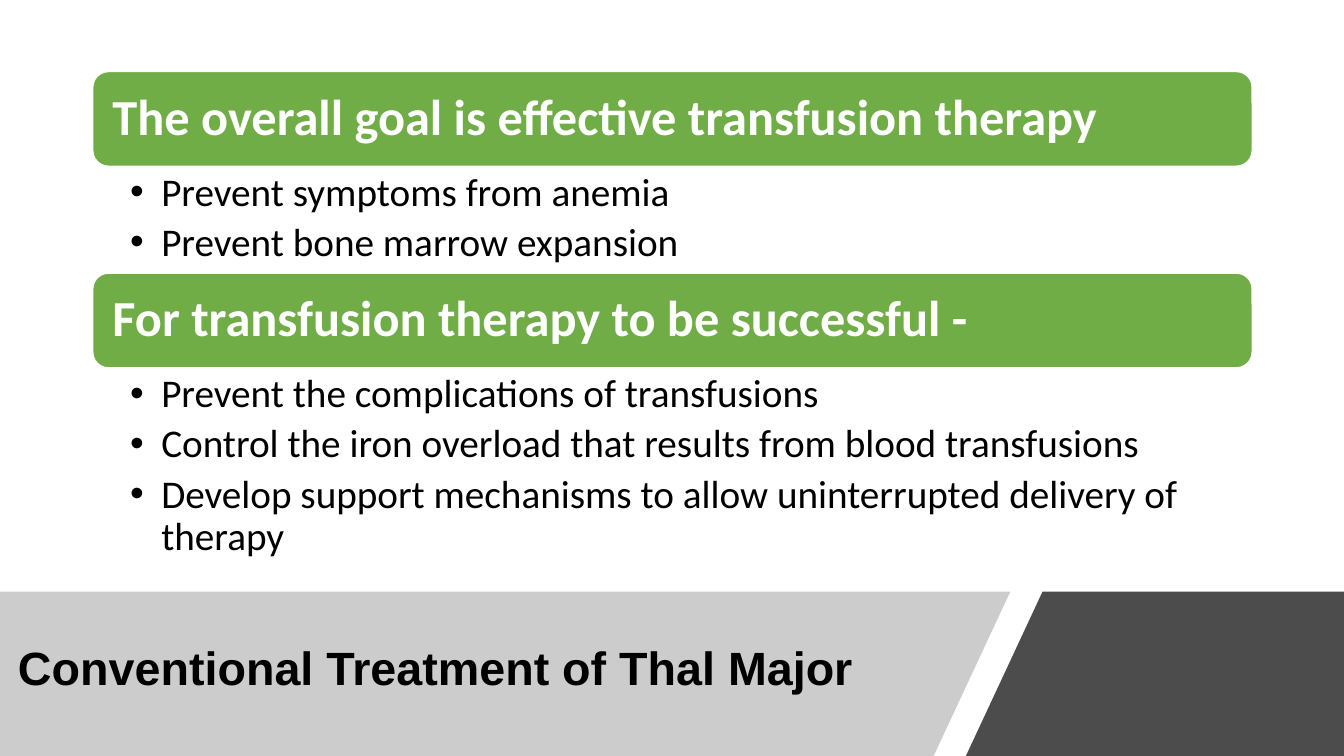
from dataclasses import dataclass

from lxml import etree
from pptx import Presentation
from pptx.dml.color import RGBColor
from pptx.enum import shapes, text
from pptx.oxml.ns import qn
from pptx.util import Inches, Pt

LEFT, WIDTH = 0.92, 11.5
HEADER_HEIGHT = 0.94
BAND_TOP, SLIDE_WIDTH, SLIDE_HEIGHT = 5.87, 13.33, 7.5


@dataclass
class Section:
    top: float
    heading: str
    points: list[str]
    points_height: float


@dataclass
class Band:
    corners: list[tuple[float, float]]
    color: str
    opacity: int


SECTIONS = [
    Section(0.71, "The overall goal is effective transfusion therapy",
            ["Prevent symptoms from anemia", "Prevent bone marrow expansion"], 1.06),
    Section(2.71, "For transfusion therapy to be successful -",
            ["Prevent the complications of transfusions",
             "Control the iron overload that results from blood transfusions",
             "Develop support mechanisms to allow uninterrupted delivery of therapy"], 2.04),
]
BANDS = [
    Band([(0, BAND_TOP), (10.02, BAND_TOP), (9.26, SLIDE_HEIGHT), (0, SLIDE_HEIGHT)],
         "808080", 40),
    Band([(10.34, BAND_TOP), (SLIDE_WIDTH, BAND_TOP), (SLIDE_WIDTH, SLIDE_HEIGHT),
          (9.58, SLIDE_HEIGHT)], "000000", 70),
]


def paint(color_format, color: str) -> None:
    color_format.rgb = RGBColor.from_string(color)


def add_band(slide, band: Band) -> None:
    start, *rest = [(Inches(x), Inches(y)) for x, y in band.corners]
    builder = slide.shapes.build_freeform(*start)
    builder.add_line_segments(rest, close=True)
    shape = builder.convert_to_shape()
    shape.shadow.inherit = False
    shape.line.fill.background()
    shape.fill.solid()
    paint(shape.fill.fore_color, band.color)
    srgb = shape.fill._xPr.find(f".//{qn('a:srgbClr')}")
    etree.SubElement(srgb, qn("a:alpha"), val=str(band.opacity * 1000))


def set_frame(frame, anchor, insets: tuple[float, float, float, float]) -> None:
    frame.word_wrap = True
    frame.vertical_anchor = anchor
    (frame.margin_left, frame.margin_top,
     frame.margin_right, frame.margin_bottom) = map(Inches, insets)


def write(paragraph, words: str, size: float, font: str, color: str, bold: bool) -> None:
    paragraph.alignment = text.PP_ALIGN.LEFT
    paragraph.line_spacing = 0.9
    run = paragraph.add_run()
    run.text = words
    run.font.size, run.font.name, run.font.bold = Pt(size), font, bold
    paint(run.font.color, color)


def add_bullet(paragraph) -> None:
    properties = paragraph._p.get_or_add_pPr()
    indent = Inches(0.31)
    properties.set("marL", str(indent))
    properties.set("indent", str(-indent))
    etree.SubElement(properties, qn("a:buFont"), typeface="Arial")
    etree.SubElement(properties, qn("a:buChar"), char="•")


def add_section(slide, section: Section) -> None:
    # Green heading
    header = slide.shapes.add_shape(
        shapes.MSO_SHAPE.ROUNDED_RECTANGLE, Inches(LEFT), Inches(section.top),
        Inches(WIDTH), Inches(HEADER_HEIGHT))
    header.shadow.inherit = False
    header.fill.solid()
    paint(header.fill.fore_color, "70AD47")
    paint(header.line.color, "FFFFFF")
    header.line.width = Pt(1)
    set_frame(header.text_frame, text.MSO_ANCHOR.MIDDLE, (0.15, 0.15, 0.15, 0.15))
    write(header.text_frame.paragraphs[0], section.heading, 36, "Calibri", "FFFFFF", True)

    # Bulleted points below it
    points = slide.shapes.add_textbox(
        Inches(LEFT), Inches(section.top + HEADER_HEIGHT + 0.01),
        Inches(WIDTH), Inches(section.points_height)).text_frame
    set_frame(points, text.MSO_ANCHOR.TOP, (0.37, 0.05, 0.28, 0.05))
    for index, point in enumerate(section.points):
        paragraph = points.add_paragraph() if index else points.paragraphs[0]
        write(paragraph, point, 28, "Calibri", "000000", False)
        paragraph.space_after = Pt(5.6)
        add_bullet(paragraph)


def main() -> None:
    deck = Presentation()
    deck.slide_width, deck.slide_height = Inches(SLIDE_WIDTH), Inches(SLIDE_HEIGHT)
    slide = deck.slides.add_slide(deck.slide_layouts[6])

    # Footer bands and title
    for band in BANDS:
        add_band(slide, band)
    title = slide.shapes.add_textbox(
        Inches(0.08), Inches(6.05), Inches(9.28), Inches(1.2)).text_frame
    set_frame(title, text.MSO_ANCHOR.MIDDLE, (0.1, 0.05, 0.1, 0.05))
    write(title.paragraphs[0], "Conventional Treatment of Thal Major",
          33.3, "Arial", "000000", True)

    # Headings with their points
    for section in SECTIONS:
        add_section(slide, section)

    deck.save("out.pptx")


if __name__ == "__main__":
    main()
